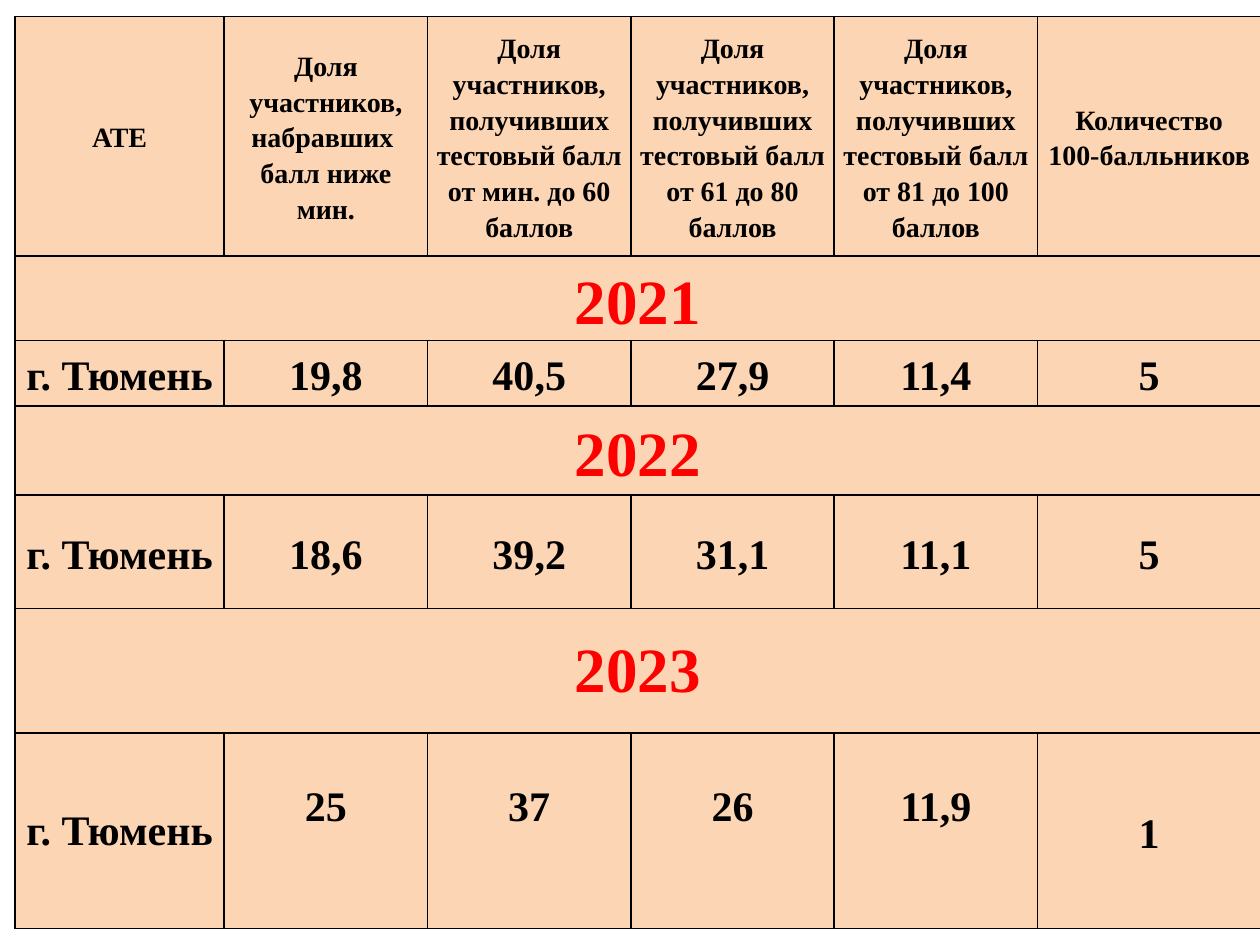
from lxml import etree
from pptx import Presentation
from pptx.dml.color import RGBColor
from pptx.enum import text
from pptx.oxml import ns
from pptx.util import Cm, Pt

COLORS = {"fill": "FCD5B5", "text": "000000", "year": "FF0000", "border": "000000"}
FONT = "Times New Roman"
SCORE = "Доля участников, получивших тестовый балл от {} баллов"
HEADER = ["АТЕ", "Доля участников, набравших \nбалл ниже мин."]
HEADER += [SCORE.format(r) for r in ("мин. до 60", "61 до 80", "81 до 100")]
HEADER += ["Количество\n100-балльников"]
CITY = "г. Тюмень"
RESULTS = [
    ("2021", ["19,8", "40,5", "27,9", "11,4", "5"]),
    ("2022", ["18,6", "39,2", "31,1", "11,1", "5"]),
    ("2023", ["25", "37", "26", "11,9", "1"]),
]
COL_WIDTHS = [4.22, 4.1, 4.1, 4.1, 4.1, 4.5]
ROW_HEIGHTS = [4.83, 1.7, 1.32, 1.8, 2.29, 2.51, 3.94]
RAISED = 1.09


def add_borders(cell):
    pr = cell._tc.get_or_add_tcPr()
    for i, side in enumerate(("lnL", "lnR", "lnT", "lnB")):
        ln = etree.Element(ns.qn("a:" + side), w=str(Pt(1)))
        fill = etree.SubElement(ln, ns.qn("a:solidFill"))
        etree.SubElement(fill, ns.qn("a:srgbClr"), val=COLORS["border"])
        pr.insert(i, ln)


def fill_cell(cell, content, size, color="text", spacing=1.15):
    cell.text_frame.text = content
    cell.vertical_anchor = text.MSO_ANCHOR.MIDDLE
    cell.margin_left = cell.margin_right = Cm(0.18)
    cell.margin_top = cell.margin_bottom = 0
    for p in cell.text_frame.paragraphs:
        p.alignment = text.PP_ALIGN.CENTER
        p.line_spacing = spacing
        for r in p.runs:
            r.font.name = FONT
            r.font.size = Pt(size)
            r.font.bold = True
            r.font.color.rgb = RGBColor.from_string(COLORS[color])


prs = Presentation()
prs.slide_width, prs.slide_height = Cm(25.4), Cm(19.05)
s = prs.slides.add_slide(prs.slide_layouts[6])
tbl = s.shapes.add_table(len(ROW_HEIGHTS), len(COL_WIDTHS), Cm(0.3), Cm(0.33),
                         Cm(sum(COL_WIDTHS)), Cm(sum(ROW_HEIGHTS))).table
for col, width in zip(tbl.columns, COL_WIDTHS):
    col.width = Cm(width)
for row, height in zip(tbl.rows, ROW_HEIGHTS):
    row.height = Cm(height)

for cell in tbl.iter_cells():
    cell.fill.solid()
    cell.fill.fore_color.rgb = RGBColor.from_string(COLORS["fill"])
    add_borders(cell)

for c, title in enumerate(HEADER):
    fill_cell(tbl.cell(0, c), title, 16)

last_col = len(COL_WIDTHS) - 1
for i, (year, values) in enumerate(RESULTS):
    top = 1 + 2 * i
    spacing = 1 if year == "2023" else 1.15
    tbl.cell(top, 0).merge(tbl.cell(top, last_col))
    fill_cell(tbl.cell(top, 0), year, 36, "year", spacing)
    fill_cell(tbl.cell(top + 1, 0), CITY, 24, spacing=spacing)
    for c, value in enumerate(values, 1):
        fill_cell(tbl.cell(top + 1, c), value, 24)

for c in range(1, last_col):
    tbl.cell(len(ROW_HEIGHTS) - 1, c).margin_bottom = Cm(RAISED)

prs.save("out.pptx")
